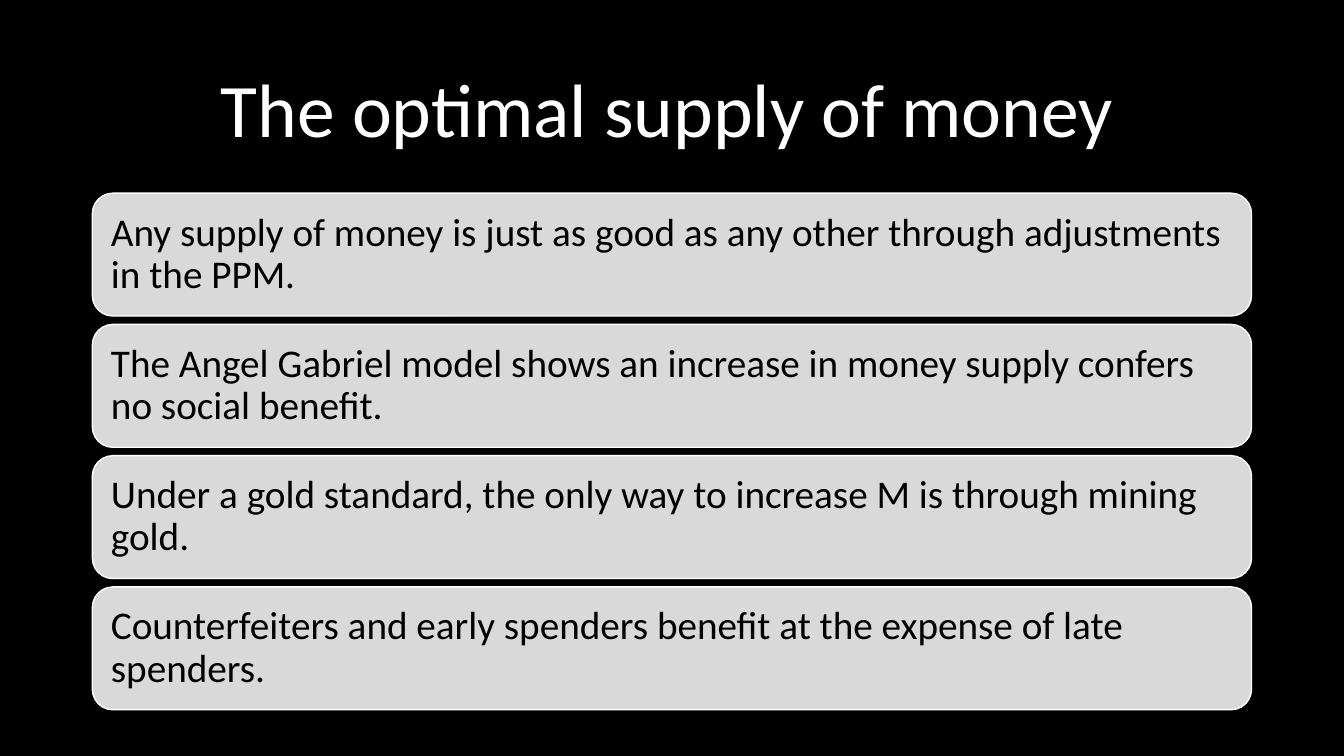
from dataclasses import dataclass

from pptx import Presentation
from pptx.dml.color import RGBColor
from pptx.enum.shapes import MSO_SHAPE
from pptx.enum.text import MSO_ANCHOR, PP_ALIGN
from pptx.slide import Slide
from pptx.text.text import TextFrame
from pptx.util import Emu, Pt

ROUNDED = MSO_SHAPE.ROUNDED_RECTANGLE
MIDDLE = MSO_ANCHOR.MIDDLE
LEFT = PP_ALIGN.LEFT

EMU_PER_PX = 9525
FONT = "Calibri"
COLORS = {
    "background": "000000",
    "title": "FFFFFF",
    "panel": "D9D9D9",
    "border": "FFFFFF",
    "statement": "000000",
}

PANEL_LEFT, PANEL_TOP = 88, 184
PANEL_WIDTH, PANEL_HEIGHT = 1104, 117
PANEL_STEP = 125
PANEL_INSET = 12

STATEMENTS = [
    "Any supply of money is just as good as any other through adjustments in the PPM.",
    "The Angel Gabriel model shows an increase in money supply confers no social benefit.",
    "Under a gold standard, the only way to increase M is through mining gold.",
    "Counterfeiters and early spenders benefit at the expense of late spenders.",
]


@dataclass(frozen=True)
class Panel:
    top: int
    statement: str


def px(length: int) -> Emu:
    return Emu(length * EMU_PER_PX)


def color(name: str) -> RGBColor:
    return RGBColor.from_string(COLORS[name])


def write(frame: TextFrame, text: str, size: int, color_name: str) -> None:
    frame.text = text
    frame.word_wrap = True
    frame.vertical_anchor = MIDDLE
    paragraph = frame.paragraphs[0]
    paragraph.alignment = LEFT
    paragraph.line_spacing = 0.9
    font = paragraph.runs[0].font
    font.name = FONT
    font.size = Pt(size)
    font.color.rgb = color(color_name)


def draw_title(slide: Slide) -> None:
    title = slide.shapes.add_textbox(px(201), px(38), px(991), px(139))
    write(title.text_frame, "The optimal supply of money", 54, "title")


def draw_panel(slide: Slide, panel: Panel) -> None:
    card = slide.shapes.add_shape(
        ROUNDED, px(PANEL_LEFT), px(panel.top), px(PANEL_WIDTH), px(PANEL_HEIGHT)
    )
    card.shadow.inherit = False
    card.fill.solid()
    card.fill.fore_color.rgb = color("panel")
    card.line.color.rgb = color("border")
    card.line.width = Pt(1)
    frame = card.text_frame
    frame.margin_left = frame.margin_right = px(PANEL_INSET)
    frame.margin_top = frame.margin_bottom = px(PANEL_INSET)
    write(frame, panel.statement, 28, "statement")


def main() -> None:
    presentation = Presentation()
    presentation.slide_width = px(1280)
    presentation.slide_height = px(720)
    slide = presentation.slides.add_slide(presentation.slide_layouts[6])
    slide.background.fill.solid()
    slide.background.fill.fore_color.rgb = color("background")
    draw_title(slide)
    for row, statement in enumerate(STATEMENTS):
        draw_panel(slide, Panel(PANEL_TOP + row * PANEL_STEP, statement))
    presentation.save("out.pptx")


if __name__ == "__main__":
    main()
